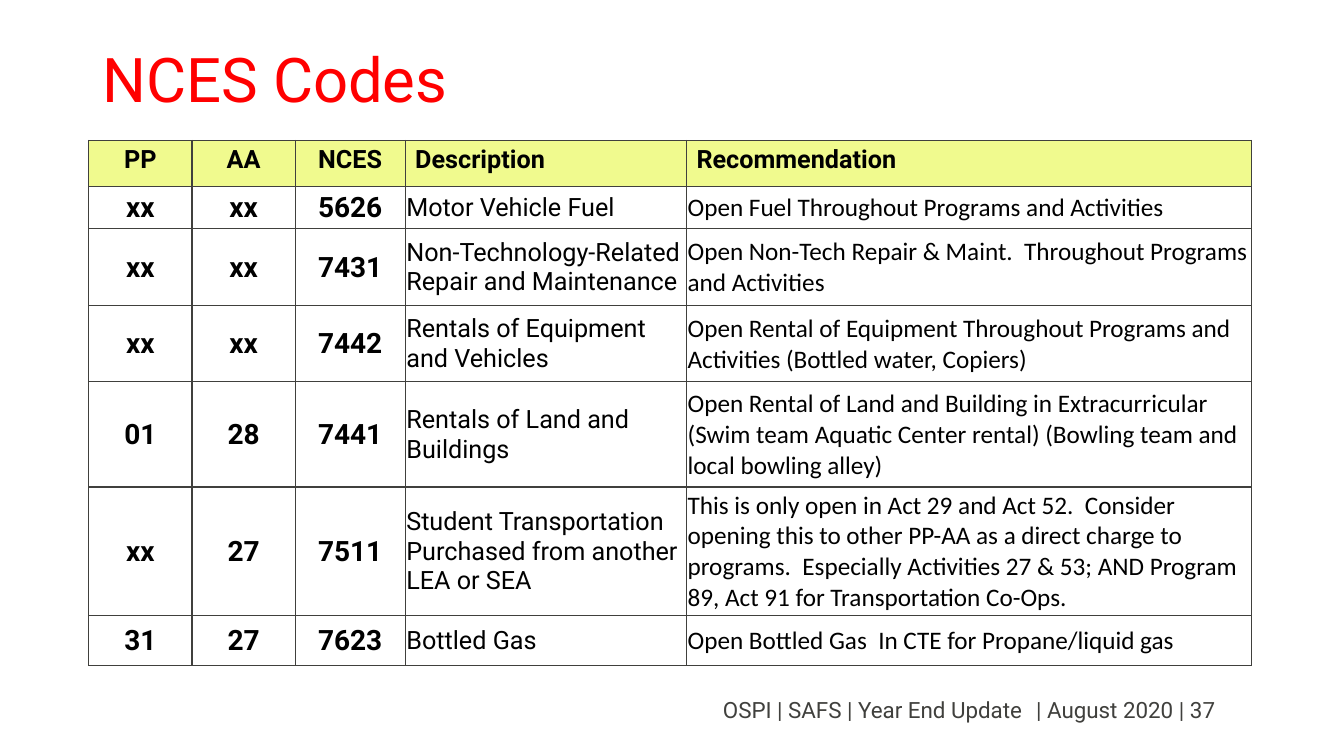
"""Build the NCES Codes slide with its table of recommendations."""
from lxml import etree
from pptx import Presentation
from pptx import util as u
from pptx.dml.color import RGBColor
from pptx.enum import text
from pptx.oxml.ns import qn

LEFT, CENTER, RIGHT = text.PP_ALIGN.LEFT, text.PP_ALIGN.CENTER, text.PP_ALIGN.RIGHT
MIDDLE, TOP = text.MSO_ANCHOR.MIDDLE, text.MSO_ANCHOR.TOP
GREY = "40403D"


def add_run(p, words, size, color, font="Roboto", bold=False, align=LEFT):
    p.alignment = align
    r = p.add_run()
    r.text = words
    r.font.size = u.Pt(size)
    r.font.name = font
    r.font.bold = bold
    r.font.color.rgb = RGBColor.from_string(color)


def add_borders(cell, color):
    tcPr = cell._tc.get_or_add_tcPr()
    for side in ("a:lnL", "a:lnR", "a:lnT", "a:lnB"):
        ln = etree.SubElement(tcPr, qn(side), w="12700")
        fill = etree.SubElement(ln, qn("a:solidFill"))
        etree.SubElement(fill, qn("a:srgbClr"), val=color)


prs = Presentation()
prs.slide_width, prs.slide_height = u.Cm(33.87), u.Cm(19.05)
s = prs.slides.add_slide(prs.slide_layouts[6])

texts = [
    ("NCES Codes", 2.33, 1.02, 29.21, 2.11, 44, "FF0000", LEFT, 0.9),
    ("OSPI | SAFS | Year End Update", 9.86, 17.37, 16.15, 1.02, 16, GREY, RIGHT, 1.0),
    ("| August 2020 |", 25.86, 17.37, 4.24, 1.02, 16, GREY, CENTER, 1.0),
    ("37", 29.74, 17.37, 1.78, 1.02, 16, GREY, LEFT, 1.0),
]
for words, x, y, w, h, size, color, align, spacing in texts:
    tf = s.shapes.add_textbox(u.Cm(x), u.Cm(y), u.Cm(w), u.Cm(h)).text_frame
    tf.word_wrap = True
    tf.vertical_anchor = MIDDLE
    p = tf.paragraphs[0]
    p.line_spacing = spacing
    add_run(p, words, size, color, align=align)

rows = [
    ("PP", "AA", "NCES", "Description", "Recommendation"),
    ("xx", "xx", "5626", "Motor Vehicle Fuel",
     "Open Fuel Throughout Programs and Activities"),
    ("xx", "xx", "7431", "Non-Technology-Related Repair and Maintenance",
     "Open Non-Tech Repair & Maint.  Throughout Programs and Activities"),
    ("xx", "xx", "7442", "Rentals of Equipment and Vehicles",
     "Open Rental of Equipment Throughout Programs and Activities "
     "(Bottled water, Copiers)"),
    ("01", "28", "7441", "Rentals of Land and Buildings",
     "Open Rental of Land and Building in Extracurricular  "
     "(Swim team Aquatic Center rental) (Bowling team and local bowling alley)"),
    ("xx", "27", "7511", "Student Transportation Purchased from another LEA or SEA",
     "This is only open in Act 29 and Act 52.  Consider opening this to other PP-AA "
     "as a direct charge to programs.  Especially Activities 27 & 53; "
     "AND Program 89, Act 91 for Transportation Co-Ops."),
    ("31", "27", "7623", "Bottled Gas",
     "Open Bottled Gas  In CTE for Propane/liquid gas"),
]
widths = [2.6, 2.6, 2.77, 7.09, 14.23]
heights = [1.16, 1.06, 1.93, 1.93, 2.65, 3.23, 1.27]
table = s.shapes.add_table(len(rows), len(widths), u.Cm(2.24), u.Cm(3.54),
                           u.Cm(sum(widths)), u.Cm(sum(heights))).table
for column, width in zip(table.columns, widths):
    column.width = u.Cm(width)
for i, (row, height) in enumerate(zip(rows, heights)):
    table.rows[i].height = u.Cm(height)
    header = i == 0
    for j, words in enumerate(row):
        cell = table.cell(i, j)
        code = j < 3
        add_borders(cell, GREY)
        if header:
            cell.fill.solid()
            cell.fill.fore_color.rgb = RGBColor.from_string("F0FA8E")
        else:
            cell.fill.background()
            cell.margin_left = cell.margin_right = cell.margin_top = u.Cm(0.03)
            cell.margin_bottom = 0
        cell.vertical_anchor = TOP if header else MIDDLE
        add_run(cell.text_frame.paragraphs[0], words,
                20 if code and not header else 18, "000000",
                "Calibri" if j == 4 and not header else "Roboto",
                header or code, CENTER if code else LEFT)

prs.save("out.pptx")
